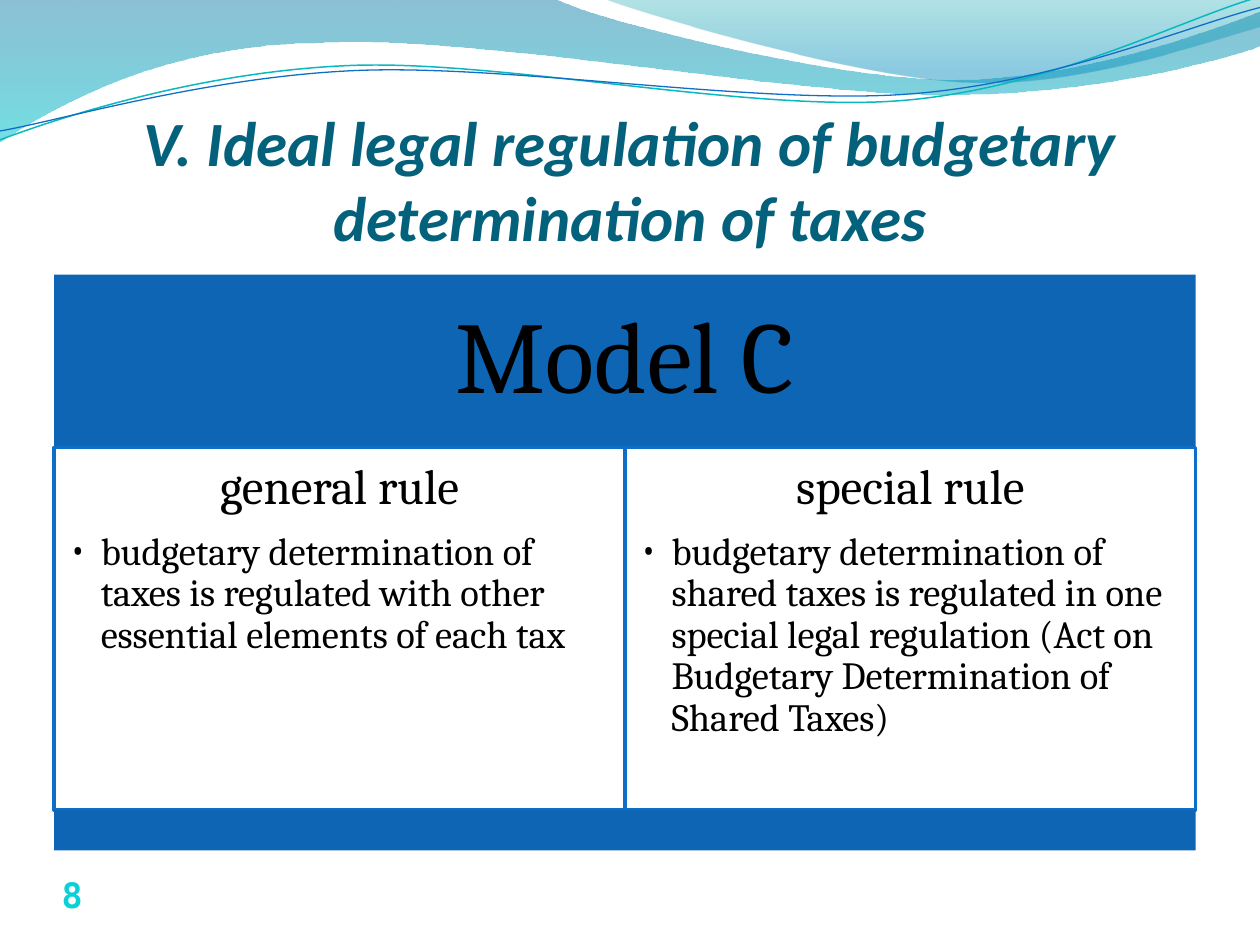
import math
import pptx
import pptx.util
import pptx.dml.color
import pptx.enum.shapes
import pptx.enum.text
import pptx.oxml
import pptx.oxml.ns

Inches, Pt = pptx.util.Inches, pptx.util.Pt
ALIGN, ANCHOR = pptx.enum.text.PP_ALIGN, pptx.enum.text.MSO_ANCHOR
FIT = pptx.enum.text.MSO_AUTO_SIZE
qn, NS = pptx.oxml.ns.qn, pptx.oxml.ns.nsdecls("a")

TITLE = "V. Ideal legal regulation of budgetary determination of taxes"
MODEL = "Model C"
RULES = [
    ("general rule",
     "budgetary determination of taxes is regulated with other "
     "essential elements of each tax"),
    ("special rule",
     "budgetary determination of shared taxes is regulated in one special "
     "legal regulation (Act on Budgetary Determination of Shared Taxes)"),
]
NUMBER = "8"
BLUE, EDGE, WHITE = "0E65B4", "0F6FC6", "FFFFFF"

# A pair is a line end; six numbers are a Bezier curve.
# Gradient stops: position, colour, opacity in percent.
WAVES = [
    ([(0, -0.01), (4.4, -0.01), (4.76, 0.17, 6.64, 0.63, 7.58, 0.63),
      (8.53, 0.63, 9.58, 0.26, 10, 0.09), (10.01, 0.36),
      (9.83, 0.44, 8.7, 0.76, 7.46, 0.75),
      (6.22, 0.75, 3.82, 0.28, 2.57, 0.34),
      (1.29, 0.35, 0.46, 0.83, -0.01, 1.13)],
     [(0, "0074A1", 45), (1, "00C6CF", 55)]),
    ([(4.79, -0.01), (5.09, 0.11, 6.82, 0.62, 7.69, 0.65),
      (8.56, 0.69, 9.61, 0.32, 10, 0.21), (10, 0)],
     [(0, "00A1A9", 30), (0.8, "008BBF", 45)]),
]
# Path, middle, colour, width.
STROKES = [
    ([(0, 1.11), (0.48, 0.93, 1.58, 0.57, 2.77, 0.52),
      (3.95, 0.47, 5.93, 0.89, 7.13, 0.8),
      (8.33, 0.71, 9.38, 0.15, 9.98, -0.02)], (4.99, 0.57), "0AB8BF", 0.85),
    ([(0, 1.04), (0.47, 0.96, 1.64, 0.61, 2.83, 0.56),
      (4.03, 0.51, 5.97, 0.83, 7.17, 0.75),
      (8.36, 0.67, 9.41, 0.21, 10, 0.06)], (5, 0.59), EDGE, 0.75),
]
TILT = -2.7

LEFT, TOP, WIDTH = 0.43, 2.18, 9.06
HEAD, BODY, FOOT = 1.37, 2.88, 0.32


def rgb(code):
    return pptx.dml.color.RGBColor.from_string(code)


def put(item, form):
    for name, value in form.items():
        setattr(item, name, value)


def pairs(part):
    return list(zip(part[::2], part[1::2]))


def turn(part, mid, angle):
    """Rotate the points of one path part about mid."""
    c, s = math.cos(math.radians(angle)), math.sin(math.radians(angle))
    flat = []
    for x, y in pairs(part):
        dx, dy = x - mid[0], y - mid[1]
        flat += [mid[0] + dx * c - dy * s, mid[1] + dx * s + dy * c]
    return tuple(flat)


def draw(shapes, path, close):
    """Draw all points as lines, then join each curve's three into one."""
    points = [tuple(map(Inches, p)) for part in path for p in pairs(part)]
    pen = shapes.build_freeform(*points[0], scale=1.0)
    pen.add_line_segments(points[1:], close=close)
    shape = pen.convert_to_shape()
    shape.shadow.inherit = False
    lines = iter(list(shape._element.iter(qn("a:lnTo"))))
    for part in path[1:]:
        group = [next(lines) for _ in pairs(part)]
        if len(group) == 3:
            curve = pptx.oxml.parse_xml(f"<a:cubicBezTo {NS}/>")
            group[0].addprevious(curve)
            for line in group:
                curve.append(line[0])
                line.getparent().remove(line)
    return shape


def shade(shape, stops):
    shape.line.fill.background()
    shape.fill.gradient()
    shape.fill.gradient_angle = 270
    for stop, (pos, code, alpha) in zip(shape.fill.gradient_stops, stops):
        stop.position = pos
        stop.color.rgb = rgb(code)
    marks = shape._element.spPr.iter(qn("a:srgbClr"))
    for mark, (pos, code, alpha) in zip(marks, stops):
        mark.append(pptx.oxml.parse_xml(
            f'<a:alpha {NS} val="{alpha * 1000}"/>'))


def stroke(shape, code, width):
    shape.line.color.rgb = rgb(code)
    shape.line.width = Pt(width)


def block(shapes, box, fill):
    kind = pptx.enum.shapes.MSO_SHAPE.RECTANGLE
    shape = shapes.add_shape(kind, *map(Inches, box))
    shape.shadow.inherit = False
    shape.fill.solid()
    shape.fill.fore_color.rgb = rgb(fill)
    shape.line.fill.background()
    return shape


def frame(shape, pads, **form):
    text = shape.text_frame
    sides = ("margin_left", "margin_top", "margin_right", "margin_bottom")
    put(text, dict(zip(sides, map(Inches, pads))))
    put(text, {"word_wrap": True, **form})
    return text


def write(para, text, size, font="Cambria", code="000000", look=None, **form):
    run = para.add_run()
    run.text = text
    put(run.font, {"size": Pt(size), "name": font, **(look or {})})
    run.font.color.rgb = rgb(code)
    put(para, form)


def bullet(para):
    props = para._p.get_or_add_pPr()
    props.set("marL", str(Inches(0.25)))
    props.set("indent", str(Inches(-0.25)))
    for tag in ('buFont {} typeface="Cambria"', 'buChar {} char="•"'):
        props.append(pptx.oxml.parse_xml(f"<a:{tag.format(NS)}/>"))


def main():
    deck = pptx.Presentation()
    put(deck, {"slide_width": Inches(10), "slide_height": Inches(7.5)})
    slide = deck.slides.add_slide(deck.slide_layouts[5])
    shapes = slide.shapes

    for path, stops in WAVES:
        shade(draw(shapes, path, True), stops)
    for path, mid, code, width in STROKES:
        flat = [turn(part, mid, -TILT) for part in path]
        line = draw(shapes, flat, False)
        line.rotation = TILT
        line.fill.background()
        stroke(line, code, width)

    title = shapes.title
    put(title, {"left": Inches(0.5), "top": Inches(0.76),
                "width": Inches(9), "height": Inches(1.26)})
    text = frame(title, (0, 0.05, 0, 0), vertical_anchor=ANCHOR.BOTTOM,
                 auto_size=FIT.NONE)
    write(text.paragraphs[0], TITLE, 36, "Calibri", "04617B",
          {"bold": True, "italic": True}, alignment=ALIGN.CENTER)

    page = shapes.add_textbox(*map(Inches, (0.39, 6.88, 1.48, 0.44)))
    text = frame(page, (0.1, 0.05, 0.1, 0.05), auto_size=FIT.SHAPE_TO_FIT_TEXT)
    write(text.paragraphs[0], NUMBER, 20, "DejaVu Sans Mono", "0BD0D9",
          {"bold": True})

    head = block(shapes, (LEFT, TOP, WIDTH, HEAD), BLUE)
    text = frame(head, [0.24] * 4, vertical_anchor=ANCHOR.MIDDLE)
    centre = {"alignment": ALIGN.CENTER, "line_spacing": 0.9}
    write(text.paragraphs[0], MODEL, 58, **centre)

    wide = WIDTH / len(RULES)
    for i, (name, detail) in enumerate(RULES):
        cell = block(shapes, (LEFT + i * wide, TOP + HEAD, wide, BODY), WHITE)
        stroke(cell, EDGE, 2)
        text = frame(cell, [0.12] * 4, vertical_anchor=ANCHOR.TOP)
        write(text.paragraphs[0], name, 28, space_after=Pt(9.5), **centre)
        para = text.add_paragraph()
        write(para, detail, 22, level=1, alignment=ALIGN.LEFT,
              line_spacing=0.9, space_after=Pt(3))
        bullet(para)

    block(shapes, (LEFT, TOP + HEAD + BODY, WIDTH, FOOT), BLUE)
    deck.save("out.pptx")


if __name__ == "__main__":
    main()
